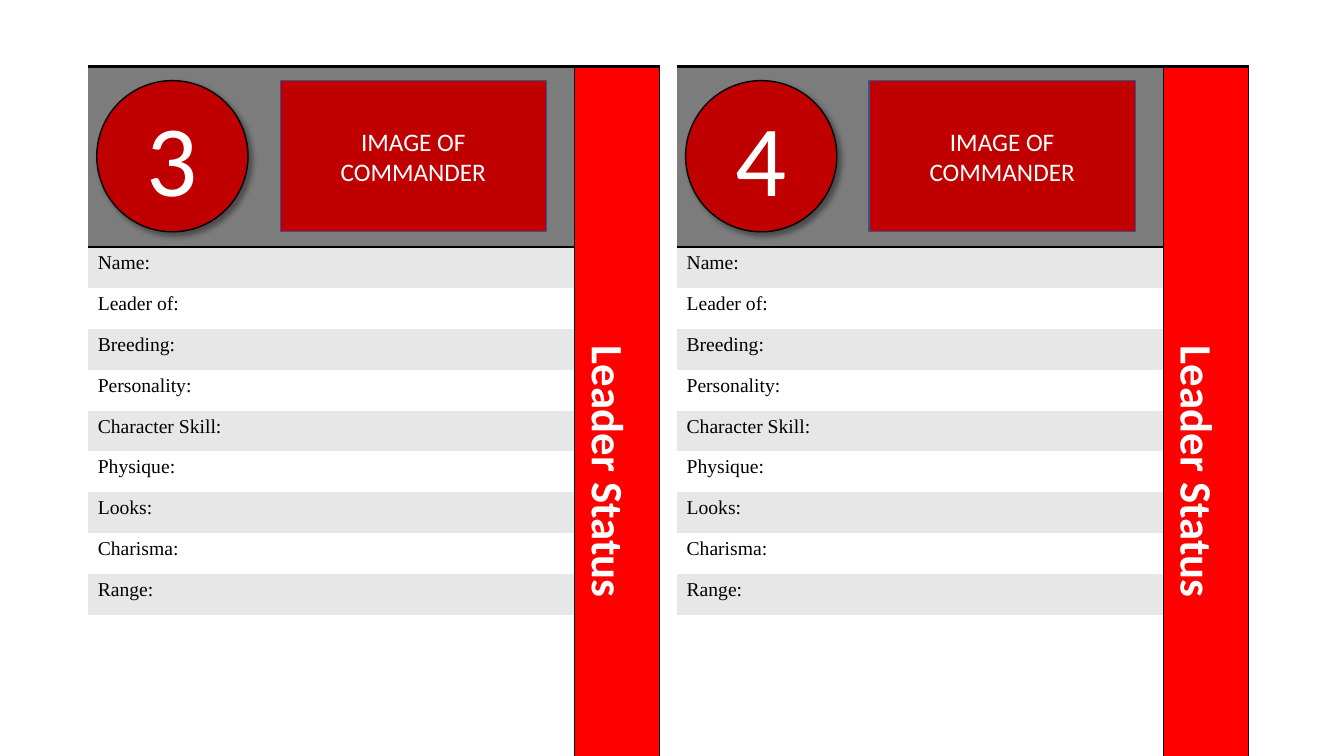
from lxml import etree
from pptx import Presentation
from pptx.dml.color import RGBColor
from pptx.enum import shapes, text
from pptx.oxml import ns
from pptx.util import Inches, Pt

TRAITS = ["Name:", "Leader of:", "Breeding:", "Personality:", "Character Skill:",
          "Physique:", "Looks:", "Charisma:", "Range:"]
CARDS = [
    {"number": "3", "left": 0.87, "label_width": 1.68},
    {"number": "4", "left": 6.71, "label_width": 1.52},
]
STATUS = "Leader Status"
PORTRAIT = "IMAGE OF COMMANDER"

BLACK = RGBColor(0x00, 0x00, 0x00)
WHITE = RGBColor(0xFF, 0xFF, 0xFF)
HEADER_GRAY = RGBColor(0x7C, 0x7C, 0x7C)
BAND_GRAY = RGBColor(0xE7, 0xE7, 0xE7)
STATUS_RED = RGBColor(0xFF, 0x00, 0x00)
DARK_RED = RGBColor(0xC0, 0x00, 0x00)
FRAME_BLUE = RGBColor(0x32, 0x54, 0x91)

CARD_TOP, CARD_WIDTH, CARD_HEIGHT = 0.66, 5.67, 5.85
HEADER_HEIGHT, STATUS_WIDTH = 1.79, 0.84
EMBLEM_TOP, EMBLEM_SIZE, EMBLEM_INSET = 0.8, 1.5, 0.09
PORTRAIT_INSET, PORTRAIT_WIDTH = 1.91, 2.64
LAST_ROW = len(TRAITS) + 1
ROW_HEIGHT = (CARD_HEIGHT - HEADER_HEIGHT) / LAST_ROW
NO_STYLE = "{2D5ABB26-0587-4C30-8999-92F81FD0307C}"


def write(frame, words, size, color, font="Calibri", bold=False, align=None):
    paragraph = frame.paragraphs[0]
    paragraph.alignment = align
    run = paragraph.add_run()
    run.text = words
    run.font.size = Pt(size)
    run.font.name = font
    run.font.bold = bold
    run.font.color.rgb = color


def paint(cell, color, **borders):
    properties = cell._tc.get_or_add_tcPr()
    for side in "LRTB":
        if side in borders:
            line = etree.SubElement(properties, ns.qn(f"a:ln{side}"), w=str(Pt(borders[side])))
            solid = etree.SubElement(line, ns.qn("a:solidFill"))
            etree.SubElement(solid, ns.qn("a:srgbClr"), val=str(BLACK))
    cell.fill.solid()
    cell.fill.fore_color.rgb = color


def add_panel(slide, preset, left, width, outline, words, size):
    panel = slide.shapes.add_shape(preset, Inches(left), Inches(EMBLEM_TOP),
                                   Inches(width), Inches(EMBLEM_SIZE))
    panel.shadow.inherit = False
    panel.fill.solid()
    panel.fill.fore_color.rgb = DARK_RED
    panel.line.color.rgb = outline
    panel.line.width = Pt(1)
    panel.text_frame.word_wrap = True
    panel.text_frame.vertical_anchor = text.MSO_ANCHOR.MIDDLE
    write(panel.text_frame, words, size, WHITE, align=text.PP_ALIGN.CENTER)
    return panel


def cast_shadow(shape):
    effects = shape.element.spPr.find(ns.qn("a:effectLst"))
    shadow = etree.SubElement(effects, ns.qn("a:outerShdw"), blurRad=str(Pt(4)),
                              dist=str(Pt(3)), dir=str(45 * 60000), algn="tl", rotWithShape="0")
    tint = etree.SubElement(shadow, ns.qn("a:srgbClr"), val=str(BLACK))
    etree.SubElement(tint, ns.qn("a:alpha"), val="40000")


def add_sheet(slide, left, label_width):
    graphic = slide.shapes.add_table(LAST_ROW + 1, 3, Inches(left), Inches(CARD_TOP),
                                     Inches(CARD_WIDTH), Inches(CARD_HEIGHT))
    sheet = graphic.table
    sheet.first_row = sheet.horz_banding = False
    next(graphic.element.iter(ns.qn("a:tableStyleId"))).text = NO_STYLE
    widths = [label_width, CARD_WIDTH - STATUS_WIDTH - label_width, STATUS_WIDTH]
    for column, width in zip(sheet.columns, widths):
        column.width = Inches(width)
    for index, row in enumerate(sheet.rows):
        row.height = Inches(ROW_HEIGHT if index else HEADER_HEIGHT)

    for column in (0, 1):
        right = {"R": 1} if column else {}
        paint(sheet.cell(0, column), HEADER_GRAY, T=2, B=2, **right)
        for index in range(1, LAST_ROW):
            paint(sheet.cell(index, column), BAND_GRAY if index % 2 else WHITE, **right)
        paint(sheet.cell(LAST_ROW, column), WHITE, B=2, **right)
    for index, trait in enumerate(TRAITS, 1):
        write(sheet.cell(index, 0).text_frame, trait, 14, BLACK, font="Times New Roman")
    for index in (0, LAST_ROW):
        sheet.cell(index, 0).merge(sheet.cell(index, 1))

    status = sheet.cell(0, 2)
    status.merge(sheet.cell(LAST_ROW, 2))
    paint(status, STATUS_RED, L=1, T=2, B=2)
    status.vertical_anchor = text.MSO_ANCHOR.MIDDLE
    status._tc.get_or_add_tcPr().set("vert", "vert")
    write(status.text_frame, STATUS, 32, WHITE, bold=True, align=text.PP_ALIGN.CENTER)


def main():
    deck = Presentation()
    deck.slide_width, deck.slide_height = Inches(13.33), Inches(7.5)
    slide = deck.slides.add_slide(deck.slide_layouts[6])
    for card in CARDS:
        add_sheet(slide, card["left"], card["label_width"])
        emblem = add_panel(slide, shapes.MSO_SHAPE.OVAL, card["left"] + EMBLEM_INSET,
                           EMBLEM_SIZE, BLACK, card["number"], 72)
        cast_shadow(emblem)
    for card in CARDS:
        add_panel(slide, shapes.MSO_SHAPE.RECTANGLE, card["left"] + PORTRAIT_INSET,
                  PORTRAIT_WIDTH, FRAME_BLUE, PORTRAIT, 18)
    deck.save("out.pptx")


if __name__ == "__main__":
    main()
